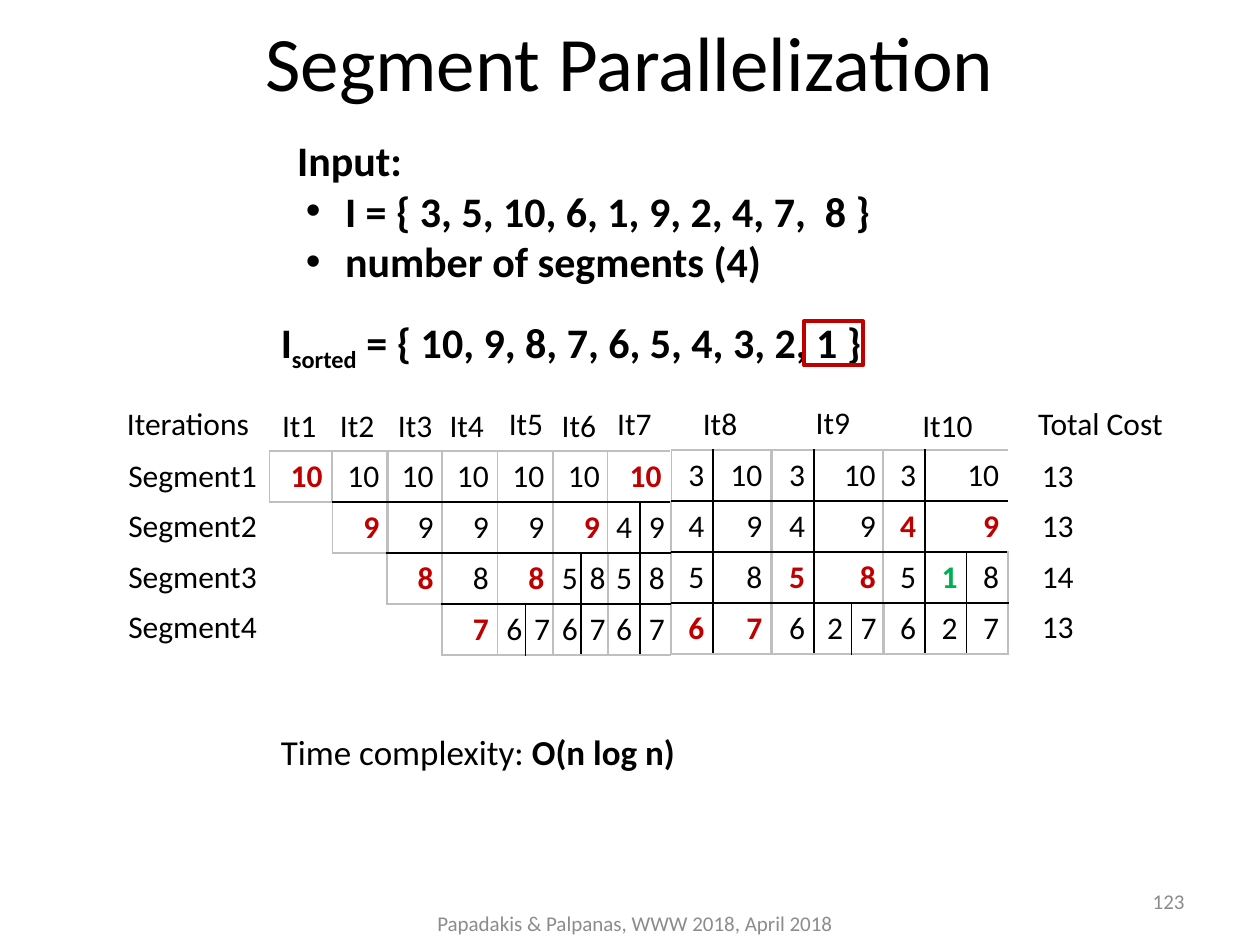
from dataclasses import dataclass
from typing import Optional

from lxml import etree
from pptx import Presentation
from pptx.dml.color import RGBColor
from pptx.enum import shapes, text
from pptx.oxml import ns
from pptx.util import Inches, Pt


@dataclass(frozen=True)
class Theme:
    font: str = "Calibri"
    ink: str = "000000"
    chosen: str = "C00000"
    last: str = "00B050"
    muted: str = "8C8C8C"
    edge: str = "BFBFBF"
    title: int = 44
    lead: int = 24
    note: int = 20
    body: int = 18
    small: int = 12


@dataclass(frozen=True)
class Run:
    words: str
    bold: bool = False
    subscript: bool = False


@dataclass(frozen=True)
class Iteration:
    """Rows hold cell values; * marks a chosen value, + the last one.

    A row with fewer values than columns merges its last value to the right.
    """
    heading: tuple[float, float, float]  # left, top, width
    left: float
    top: float
    columns: tuple[float, ...]
    rows: tuple[str, ...]


THEME = Theme()
LEFT, CENTER, RIGHT = text.PP_ALIGN.LEFT, text.PP_ALIGN.CENTER, text.PP_ALIGN.RIGHT
ROW_HEIGHT = Inches(1.62 / 4)

ITERATIONS = (
    Iteration((2.13, 3.17, 0.49), 2.14, 3.58, (0.49,), ("*10",)),
    Iteration((2.56, 3.17, 0.55), 2.64, 3.58, (0.44,), ("10", "*9")),
    Iteration((3.02, 3.17, 0.55), 3.07, 3.58, (0.44,), ("10", "9", "*8")),
    Iteration((3.43, 3.17, 0.55), 3.51, 3.58, (0.44,), ("10", "9", "8", "*7")),
    Iteration((3.9, 3.16, 0.55), 3.95, 3.58, (0.22, 0.22), ("10", "9", "*8", "6 7")),
    Iteration((4.32, 3.17, 0.55), 4.39, 3.58, (0.22, 0.22), ("10", "*9", "5 8", "6 7")),
    Iteration((4.76, 3.16, 0.55), 4.82, 3.58, (0.26, 0.24), ("*10", "4 9", "5 8", "6 7")),
    Iteration((5.32, 3.16, 0.79), 5.33, 3.57, (0.33, 0.46),
              ("3 10", "4 9", "5 8", "*6 *7")),
    Iteration((6.1, 3.15, 1.02), 6.13, 3.57, (0.33, 0.3, 0.26),
              ("3 10", "4 9", "*5 *8", "6 2 7")),
    Iteration((7.02, 3.17, 1), 7.01, 3.57, (0.33, 0.33, 0.33),
              ("3 10", "*4 *9", "5 +1 8", "6 2 7")),
)
TOTAL_COSTS = (13, 13, 14, 13)


def write(paragraph, *runs: Run, size: int = THEME.body, color: str = THEME.ink,
          align=LEFT) -> None:
    paragraph.alignment = align
    for part in runs:
        run = paragraph.add_run()
        run.text = part.words
        run.font.name = THEME.font
        run.font.size = Pt(size)
        run.font.bold = part.bold
        run.font.color.rgb = RGBColor.from_string(color)
        if part.subscript:
            run._r.get_or_add_rPr().set("baseline", "-25000")


def add_text(slide, at: tuple[float, float, float, float], *runs: Run,
             middle: bool = False, **style):
    frame = slide.shapes.add_textbox(*map(Inches, at)).text_frame
    frame.word_wrap = True
    if middle:
        frame.vertical_anchor = text.MSO_ANCHOR.MIDDLE
    else:
        frame.auto_size = text.MSO_AUTO_SIZE.SHAPE_TO_FIT_TEXT
    write(frame.paragraphs[0], *runs, **style)
    return frame


def add_bullet(frame, words: str) -> None:
    paragraph = frame.add_paragraph()
    properties = paragraph._p.get_or_add_pPr()
    properties.set("marL", str(Inches(0.38)))
    properties.set("indent", str(Inches(-0.31)))
    etree.SubElement(properties, ns.qn("a:buFont"), typeface="Arial")
    etree.SubElement(properties, ns.qn("a:buChar"), char="•")
    write(paragraph, Run(words, bold=True), size=THEME.lead)


def set_borders(cell, colors: dict[str, Optional[str]]) -> None:
    """Colors are keyed by side (L, R, T, B); None leaves the side without a line."""
    properties = cell._tc.get_or_add_tcPr()
    for position, (side, color) in enumerate(colors.items()):
        line = etree.Element(ns.qn(f"a:ln{side}"), w=str(Pt(1)))
        if color is None:
            etree.SubElement(line, ns.qn("a:noFill"))
        else:
            fill = etree.SubElement(line, ns.qn("a:solidFill"))
            etree.SubElement(fill, ns.qn("a:srgbClr"), val=color)
        properties.insert(position, line)


def add_iteration(slide, iteration: Iteration) -> None:
    row_count, column_count = len(iteration.rows), len(iteration.columns)
    table = slide.shapes.add_table(
        row_count, column_count, Inches(iteration.left), Inches(iteration.top),
        Inches(sum(iteration.columns)), ROW_HEIGHT * row_count).table
    table.first_row = table.horz_banding = False
    for column, width in zip(table.columns, iteration.columns):
        column.width = Inches(width)

    for r, row in enumerate(iteration.rows):
        values = row.split()
        last = len(values) - 1
        for c in range(column_count):
            cell = table.cell(r, c)
            cell.fill.background()
            cell.margin_left = cell.margin_right = Inches(0.07)
            cell.margin_top = cell.margin_bottom = Inches(0.05)
            set_borders(cell, {
                "L": THEME.edge if c == 0 else THEME.ink if c <= last else None,
                "R": (THEME.edge if c == column_count - 1
                      else THEME.ink if c < last else None),
                "T": THEME.edge if r == 0 else THEME.ink,
                "B": THEME.edge if r == row_count - 1 else THEME.ink,
            })
        if last < column_count - 1:
            table.cell(r, last).merge(table.cell(r, column_count - 1))
        for c, value in enumerate(values):
            color = {"*": THEME.chosen, "+": THEME.last}.get(value[0], THEME.ink)
            write(table.cell(r, c).text_frame.paragraphs[0],
                  Run(value.lstrip("*+"), bold=color != THEME.ink),
                  color=color, align=RIGHT)


def main() -> None:
    deck = Presentation()
    deck.slide_width, deck.slide_height = Inches(10), Inches(7.5)
    slide = deck.slides.add_slide(deck.slide_layouts[6])

    add_text(slide, (0, 0.05, 10, 0.86), Run("Segment Parallelization"),
             size=THEME.title, align=CENTER, middle=True)
    add_text(slide, (3.27, 7.13, 3.54, 0.4),
             Run("Papadakis & Palpanas, WWW 2018, April 2018"),
             size=THEME.small, color=THEME.muted, align=CENTER, middle=True)
    add_text(slide, (7.17, 6.95, 2.33, 0.4), Run("123"),
             size=THEME.small, color=THEME.muted, align=RIGHT, middle=True)

    inputs = add_text(slide, (2.26, 1.02, 6.58, 1.31), Run("Input:", bold=True),
                      size=THEME.lead)
    add_bullet(inputs, "I = { 3, 5, 10, 6, 1, 9, 2, 4, 7,  8 }")
    add_bullet(inputs, "number of segments (4)")

    add_text(slide, (0.91, 3.16, 1.36, 0.4), Run("Iterations"))
    add_text(slide, (8.14, 3.16, 1.5, 0.4), Run("Total Cost"))
    for number, iteration in enumerate(ITERATIONS, 1):
        add_iteration(slide, iteration)
        add_text(slide, (*iteration.heading, 0.4), Run(f"It{number}"), align=CENTER)
    for index, cost in enumerate(TOTAL_COSTS):
        top = 3.57 + index * 0.4
        add_text(slide, (0.92, top, 1.36, 0.4), Run(f"Segment{index + 1}"))
        add_text(slide, (7.99, top, 0.63, 0.4), Run(str(cost)), align=RIGHT)

    add_text(slide, (2.13, 5.75, 4.09, 0.44), Run("Time complexity: "),
             Run("O(n log n)", bold=True), size=THEME.note)
    add_text(slide, (2.13, 2.46, 5.62, 0.91), Run("I", bold=True),
             Run("sorted", bold=True, subscript=True),
             Run(" = { 10, 9, 8, 7, 6, 5, 4, 3, 2, 1 }", bold=True), size=THEME.lead)

    current_item = slide.shapes.add_shape(
        shapes.MSO_SHAPE.RECTANGLE, *map(Inches, (6.38, 2.55, 0.47, 0.35)))
    current_item.shadow.inherit = False
    current_item.fill.background()
    current_item.line.color.rgb = RGBColor.from_string(THEME.chosen)
    current_item.line.width = Pt(2.25)

    deck.save("out.pptx")


if __name__ == "__main__":
    main()
